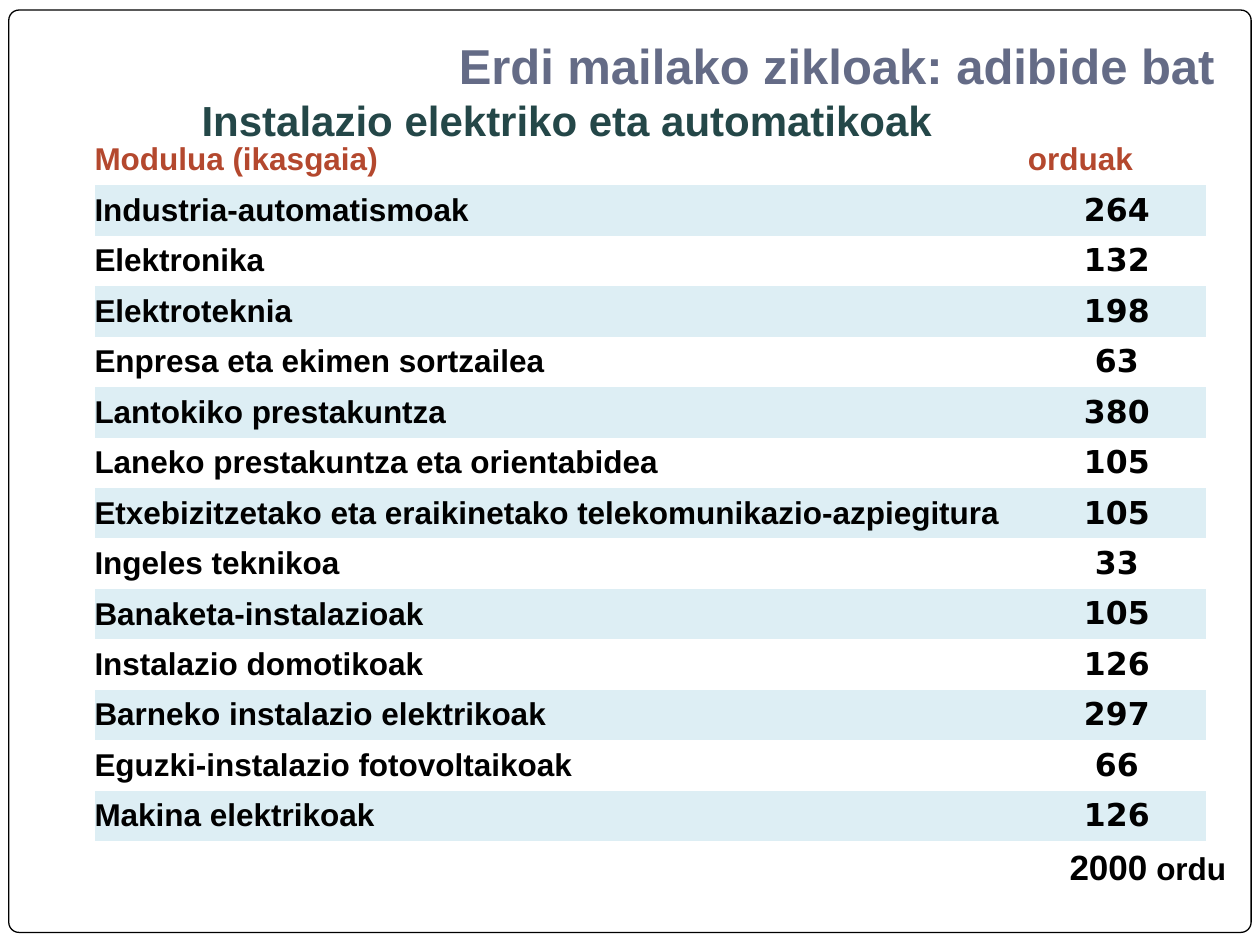
from pptx import Presentation
from pptx.dml.color import RGBColor
from pptx.enum.shapes import MSO_SHAPE
from pptx.enum.text import MSO_ANCHOR, MSO_AUTO_SIZE, PP_ALIGN
from pptx.oxml.ns import qn
from pptx.util import Inches, Pt

MODULES = [
    ("Industria-automatismoak", 264),
    ("Elektronika", 132),
    ("Elektroteknia", 198),
    ("Enpresa eta ekimen sortzailea", 63),
    ("Lantokiko prestakuntza", 380),
    ("Laneko prestakuntza eta orientabidea", 105),
    ("Etxebizitzetako eta eraikinetako telekomunikazio-azpiegitura", 105),
    ("Ingeles teknikoa", 33),
    ("Banaketa-instalazioak", 105),
    ("Instalazio domotikoak", 126),
    ("Barneko instalazio elektrikoak", 297),
    ("Eguzki-instalazio fotovoltaikoak", 66),
    ("Makina elektrikoak", 126),
]
NO_GRID_STYLE = "{2D5ABB26-0587-4C30-8999-92F81FD0307C}"


def colour(hex_string):
    """Turn a hex string into a colour."""
    return RGBColor.from_string(hex_string)


def style(span, size, ink="000000", face="Arial", bold=True):
    """Format the font of a run."""
    span.font.size = Pt(size)
    span.font.name = face
    span.font.bold = bold
    span.font.color.rgb = colour(ink)


def set_margins(frame, left, top, right, bottom):
    """Set the inner margins of a text frame or a cell, in inches."""
    frame.margin_left, frame.margin_top = Inches(left), Inches(top)
    frame.margin_right, frame.margin_bottom = Inches(right), Inches(bottom)


def add_frame(page, box):
    """Draw the rounded page border behind the title."""
    border = page.shapes.add_shape(MSO_SHAPE.ROUNDED_RECTANGLE, *box)
    border.adjustments[0] = 0.011
    border.shadow.inherit = False
    border.fill.solid()
    border.fill.fore_color.rgb = colour("FFFFFF")
    border.line.color.rgb = colour("000000")
    border.line.width = Pt(0.75)
    border.element.addnext(page.shapes.title.element)


def add_title(page, box):
    """Fill the title placeholder with the heading and the course name."""
    title = page.shapes.title
    title.left, title.top, title.width, title.height = box
    frame = title.text_frame
    frame.word_wrap = True
    frame.auto_size = MSO_AUTO_SIZE.NONE
    frame.vertical_anchor = MSO_ANCHOR.BOTTOM
    set_margins(frame, 0.1, 0.05, 0.1, 0.1)
    frame.text = "Erdi mailako zikloak: adibide bat\nInstalazio elektriko eta automatikoak"
    looks = [(28, "646B86", PP_ALIGN.RIGHT), (24, "244748", PP_ALIGN.LEFT)]
    for para, (size, ink, align) in zip(frame.paragraphs, looks):
        para.alignment = align
        style(para.runs[0], size, ink)
    frame.paragraphs[0].runs[0].font.language_id = None
    frame.paragraphs[0]._p.get_or_add_pPr().set("marR", str(Inches(0.26)))


def fill_cell(cell, text, ink, face, align, band):
    """Write one table cell, with a band colour or no fill."""
    set_margins(cell, 0, 0, 0, 0)
    cell.vertical_anchor = MSO_ANCHOR.MIDDLE
    cell.text_frame.text = text
    para = cell.text_frame.paragraphs[0]
    para.alignment = align
    style(para.runs[0], 18, ink, face)
    if band:
        cell.fill.solid()
        cell.fill.fore_color.rgb = colour("DDEEF4")
    else:
        cell.fill.background()


def add_hours_table(page, box):
    """Add the table of modules and hours, banded on every other row."""
    holder = page.shapes.add_table(len(MODULES) + 1, 2, *box)
    holder.element.find(".//" + qn("a:tableStyleId")).text = NO_GRID_STYLE
    table = holder.table
    table.first_row = table.horz_banding = False
    table.columns[0].width = int(box[2] * 0.84)
    table.columns[1].width = box[2] - table.columns[0].width
    for column, heading in enumerate(("Modulua (ikasgaia)", "orduak")):
        fill_cell(table.cell(0, column), heading, "B4482E", "Arial", PP_ALIGN.LEFT, False)
    for row, (module, hours) in enumerate(MODULES, 1):
        band = row % 2 == 1
        fill_cell(table.cell(row, 0), module, "000000", "Arial", PP_ALIGN.LEFT, band)
        fill_cell(table.cell(row, 1), str(hours), "000000", "DejaVu Sans", PP_ALIGN.CENTER, band)


def add_total(page, box):
    """Write the total of hours under the table."""
    frame = page.shapes.add_textbox(*box).text_frame
    frame.word_wrap = False
    para = frame.paragraphs[0]
    for text, size, bold in (("2000", 20, True), (" ", 18, False), ("ordu", 18, True)):
        span = para.add_run()
        span.text = text
        style(span, size, bold=bold)


def main():
    """Build the slide and save it."""
    deck = Presentation()
    deck.slide_width, deck.slide_height = Inches(10), Inches(7.5)

    def share(left, top, width, height):
        """Turn shares of the slide's size into a box."""
        across, down = deck.slide_width, deck.slide_height
        return int(left * across), int(top * down), int(width * across), int(height * down)

    page = deck.slides.add_slide(deck.slide_layouts[5])
    add_frame(page, (Inches(0.07), Inches(0.08), Inches(9.86), Inches(7.32)))
    add_title(page, share(0.15, 0, 0.85, 1 / 6))
    add_hours_table(page, (Inches(0.75), Inches(1.07), Inches(8.82), Inches(5.61)))
    add_total(page, (Inches(8.39), Inches(6.66), Inches(1.46), Inches(0.43)))
    deck.save("out.pptx")


if __name__ == "__main__":
    main()
